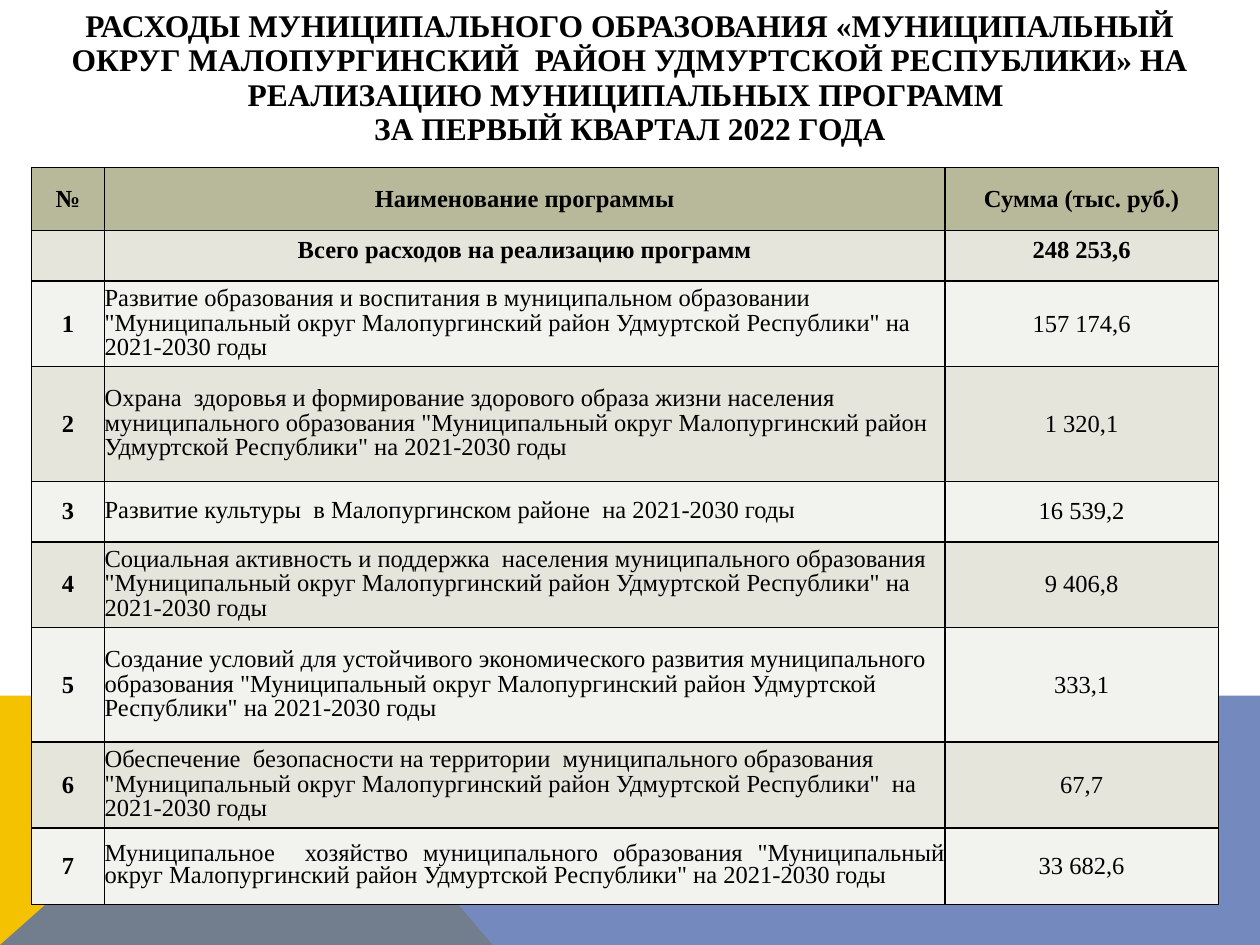
import pptx
import pptx.util
import pptx.dml.color
import pptx.enum.text
import pptx.oxml
import pptx.oxml.ns

Inches, Pt = pptx.util.Inches, pptx.util.Pt
RGBColor = pptx.dml.color.RGBColor
ALIGN = pptx.enum.text.PP_ALIGN
MIDDLE = pptx.enum.text.MSO_ANCHOR.MIDDLE
TOP = pptx.enum.text.MSO_ANCHOR.TOP

FONT = "Times New Roman"
BLACK = RGBColor(0x00, 0x00, 0x00)
YELLOW = RGBColor(0xF5, 0xC2, 0x01)
BLUE = RGBColor(0x52, 0x6D, 0xB0)
HEADER = RGBColor(0xB8, 0xB8, 0x9B)
BANDS = (RGBColor(0xE5, 0xE5, 0xDC), RGBColor(0xF2, 0xF2, 0xEE))

TITLE = (
    "РАСХОДЫ МУНИЦИПАЛЬНОГО ОБРАЗОВАНИЯ «МУНИЦИПАЛЬНЫЙ ОКРУГ МАЛОПУРГИНСКИЙ  РАЙОН "
    "УДМУРТСКОЙ РЕСПУБЛИКИ» НА РЕАЛИЗАЦИЮ МУНИЦИПАЛЬНЫХ ПРОГРАММ \v"
    "ЗА ПЕРВЫЙ КВАРТАЛ 2022 ГОДА"
)
DISTRICT = '"Муниципальный округ Малопургинский район Удмуртской Республики"'
YEARS = "2021-2030 годы"
ROWS = [
    (0.5, "№", "Наименование программы", "Сумма (тыс. руб.)"),
    (0.38, "", "Всего расходов на реализацию программ", "248 253,6"),
    (0.68, "1", f"Развитие образования и воспитания в муниципальном образовании {DISTRICT} на {YEARS}",
     "157 174,6"),
    (0.91, "2", "Охрана  здоровья и формирование здорового образа жизни населения "
     f"муниципального образования {DISTRICT} на {YEARS}", "1 320,1"),
    (0.48, "3", f"Развитие культуры  в Малопургинском районе  на {YEARS}", "16 539,2"),
    (0.68, "4", "Социальная активность и поддержка  населения муниципального образования "
     f"{DISTRICT} на {YEARS}", "9 406,8"),
    (0.91, "5", "Создание условий для устойчивого экономического развития муниципального образования "
     f"{DISTRICT} на {YEARS}", "333,1"),
    (0.68, "6", "Обеспечение  безопасности на территории  муниципального образования "
     f"{DISTRICT}  на  {YEARS}", "67,7"),
    (0.61, "7", f"Муниципальное  хозяйство муниципального образования {DISTRICT} на {YEARS}",
     "33 682,6"),
]
COLUMNS = (0.58, 6.67, 2.17)
TOTAL_ROW, LAST_ROW = 1, len(ROWS) - 1
NAME_COLUMN = 1

W, H = 10, 7.5
BAND_TOP = 5.52
PEAK = 2.23
BACKDROP = [
    ([(0, H), (0, BAND_TOP), (PEAK, BAND_TOP), (3.91, H)], YELLOW, None),
    ([(0, H), (PEAK, BAND_TOP), (W, BAND_TOP), (W, H)], BLUE, 80),
]


def add_polygon(slide, points, color, opacity):
    start, *rest = [(Inches(x), Inches(y)) for x, y in points]
    fb = slide.shapes.build_freeform(*start)
    fb.add_line_segments(rest, close=True)
    sp = fb.convert_to_shape()
    sp.shadow.inherit = False
    sp.line.fill.background()
    sp.fill.solid()
    sp.fill.fore_color.rgb = color
    if opacity:
        clr = sp.fill._xPr.find(".//" + pptx.oxml.ns.qn("a:srgbClr"))
        clr.append(pptx.oxml.parse_xml(
            f'<a:alpha {pptx.oxml.ns.nsdecls("a")} val="{opacity * 1000}"/>'))


def write(tf, text, size, bold, align, spacing=None):
    p = tf.paragraphs[0]
    p.text = text
    p.alignment = align
    if spacing:
        p.line_spacing = spacing
    for r in p.runs or [p.add_run()]:
        r.font.name = FONT
        r.font.size = Pt(size)
        r.font.bold = bold
        r.font.color.rgb = BLACK


def add_borders(cell):
    tc_pr = cell._tc.get_or_add_tcPr()
    for i, side in enumerate(("lnL", "lnR", "lnT", "lnB")):
        tc_pr.insert(i, pptx.oxml.parse_xml(
            f'<a:{side} {pptx.oxml.ns.nsdecls("a")} w="{Pt(1)}">'
            f'<a:solidFill><a:srgbClr val="{BLACK}"/></a:solidFill></a:{side}>'))


def fill_cell(cell, text, row, col):
    is_program = row > TOTAL_ROW
    is_name = is_program and col == NAME_COLUMN
    align, spacing = ALIGN.CENTER, None
    if is_name:
        cell.margin_left = cell.margin_right = cell.margin_top = cell.margin_bottom = 0
        align, spacing = (ALIGN.JUSTIFY, 0.8) if row == LAST_ROW else (ALIGN.LEFT, 0.9)
    write(cell.text_frame, text, 14, not is_program or col == 0, align, spacing)
    cell.vertical_anchor = TOP if row == TOTAL_ROW else MIDDLE
    cell.fill.solid()
    cell.fill.fore_color.rgb = BANDS[(row - 1) % 2] if row else HEADER
    add_borders(cell)


def main():
    prs = pptx.Presentation()
    prs.slide_width, prs.slide_height = Inches(W), Inches(H)
    slide = prs.slides.add_slide(prs.slide_layouts[6])

    for points, color, opacity in BACKDROP:
        add_polygon(slide, points, color, opacity)

    tf = slide.shapes.add_textbox(Inches(0.25), Inches(0.25), Inches(9.5), Inches(0.75)).text_frame
    tf.word_wrap = True
    tf.vertical_anchor = MIDDLE
    write(tf, TITLE, 18, True, ALIGN.CENTER, 0.9)

    heights = [row[0] for row in ROWS]
    table = slide.shapes.add_table(
        len(ROWS), len(COLUMNS), Inches(0.25), Inches(1.33),
        Inches(sum(COLUMNS)), Inches(sum(heights))).table
    for column, width in zip(table.columns, COLUMNS):
        column.width = Inches(width)
    for i, (height, *texts) in enumerate(ROWS):
        table.rows[i].height = Inches(height)
        for j, text in enumerate(texts):
            fill_cell(table.cell(i, j), text, i, j)

    prs.save("out.pptx")


if __name__ == "__main__":
    main()
